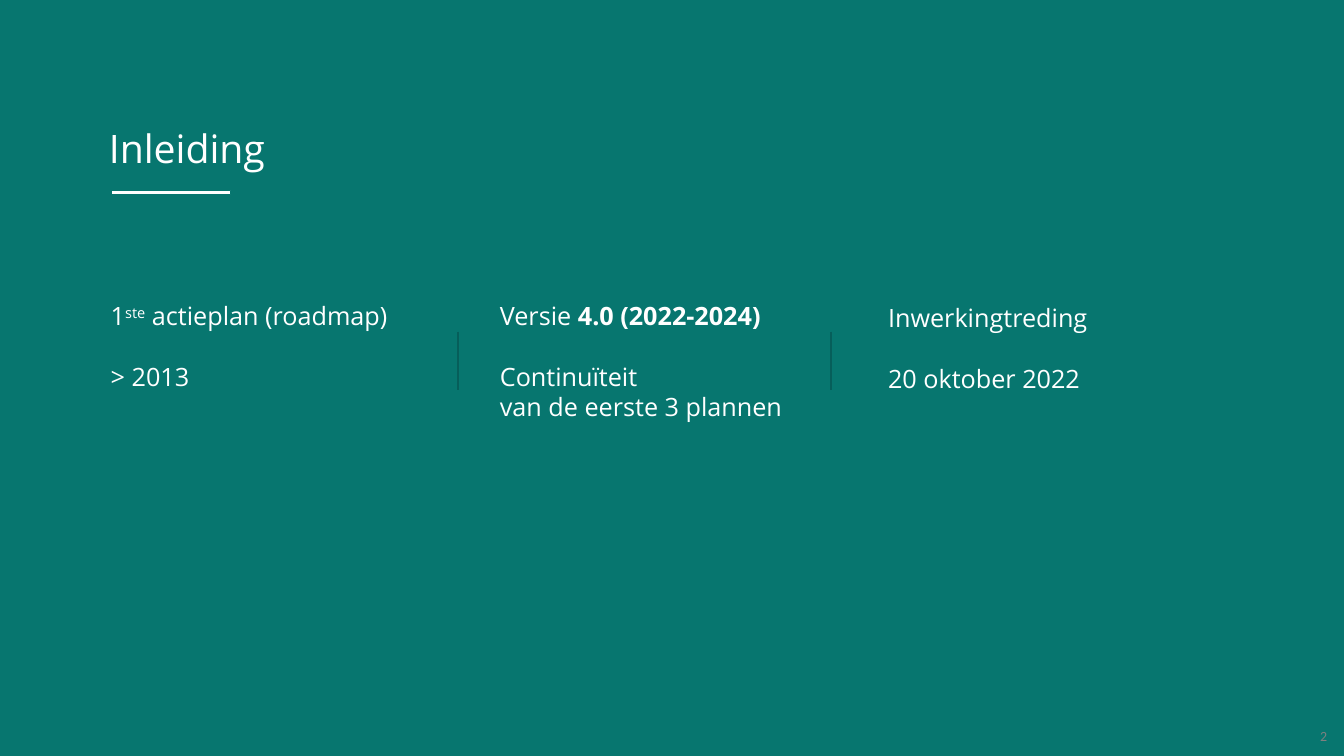
from pptx import Presentation
from pptx.dml.color import RGBColor
from pptx.enum.shapes import MSO_CONNECTOR as Conn, MSO_SHAPE as Shape
from pptx.enum.text import MSO_ANCHOR as Anchor, PP_ALIGN as Align
from pptx.util import Inches, Pt
from lxml.etree import SubElement
from pptx.oxml.ns import qn

TEAL, DARK, WHITE, GREY = "07766F", "065E5A", "FFFFFF", "808080"


def paint(color, code):
    color.rgb = RGBColor.from_string(code)


class Deck:
    """Holds the text style and the current slide, and adds its elements."""

    def __init__(self, slide, face="Open Sans"):
        self.slide = slide
        self.face = face
        fill = slide.background.fill
        fill.solid()
        paint(fill.fore_color, TEAL)

    def style(self, para, size, code=WHITE, face=None):
        font = para.font
        font.name, font.size, font.bold = face or self.face, Pt(size), False
        paint(font.color, code)

    def title(self, text, x, y, w, h):
        box = self.slide.shapes.title
        box.left, box.top, box.width, box.height = map(Inches, (x, y, w, h))
        frame = box.text_frame
        frame.text = text
        frame.vertical_anchor = Anchor.TOP
        para = frame.paragraphs[0]
        para.alignment = Align.LEFT
        self.style(para, 28)

    def text(self, x, y, w, h):
        box = self.slide.shapes.add_textbox(*map(Inches, (x, y, w, h)))
        box.text_frame.word_wrap = True
        return box.text_frame

    def column(self, head, body, x, y):
        frame = self.text(x, y, 3.54, 1.67)
        first = frame.paragraphs[0]
        first.line_spacing = Pt(14)
        self.style(first, 18)
        for words, kind in head:
            run = first.add_run()
            run.text = words
            if kind == "bold":
                run.font.bold = True
            elif kind == "super":
                run._r.get_or_add_rPr().set("baseline", "30000")
        last = frame.add_paragraph()
        last.text = body
        last.line_spacing = last.space_before = Pt(21.5)
        self.style(last, 18)

    def number(self, text, x, y, w, h):
        frame = self.text(x, y, w, h)
        frame.vertical_anchor = Anchor.MIDDLE
        para = frame.paragraphs[0]
        para.text = text
        para.alignment = Align.RIGHT
        self.style(para, 10, GREY, "Calibri")

    def bar(self, x, y, w, h):
        bar = self.slide.shapes.add_shape(Shape.RECTANGLE, *map(Inches, (x, y, w, h)))
        bar.shadow.inherit = False
        bar.fill.solid()
        paint(bar.fill.fore_color, WHITE)
        paint(bar.line.color, TEAL)
        bar.line.width = Pt(0.75)

    def rule(self, x, top, end):
        rule = self.slide.shapes.add_connector(
            Conn.STRAIGHT, *map(Inches, (x, top, x, end)))
        paint(rule.line.color, DARK)
        rule.line.width = Pt(1.25)
        SubElement(rule._element.spPr, qn("a:effectLst"))


def main():
    show = Presentation()
    show.slide_width, show.slide_height = Inches(13.33), Inches(7.5)
    deck = Deck(show.slides.add_slide(show.slide_layouts[5]))
    deck.bar(1.11, 1.89, 1.18, 0.04)
    deck.number("2", 12.17, 7.1, 1.09, 0.4)
    deck.title("Inleiding", 0.98, 1.18, 4.76, 0.61)
    columns = [
        ([("1", ""), ("ste", "super"), (" actieplan (roadmap)", "")],
         "> 2013", 1, 3.04),
        ([("Versie ", ""), ("4.0 (2022-2024)", "bold")],
         "Continuïteit\vvan de eerste 3 plannen", 4.86, 3.04),
        ([("Inwerkingtreding", "")], "20 oktober 2022", 8.71, 3.06),
    ]
    for column in columns:
        deck.column(*column)
    for x in (4.54, 8.24):
        deck.rule(x, 3.29, 3.87)
    show.save("out.pptx")


if __name__ == "__main__":
    main()
